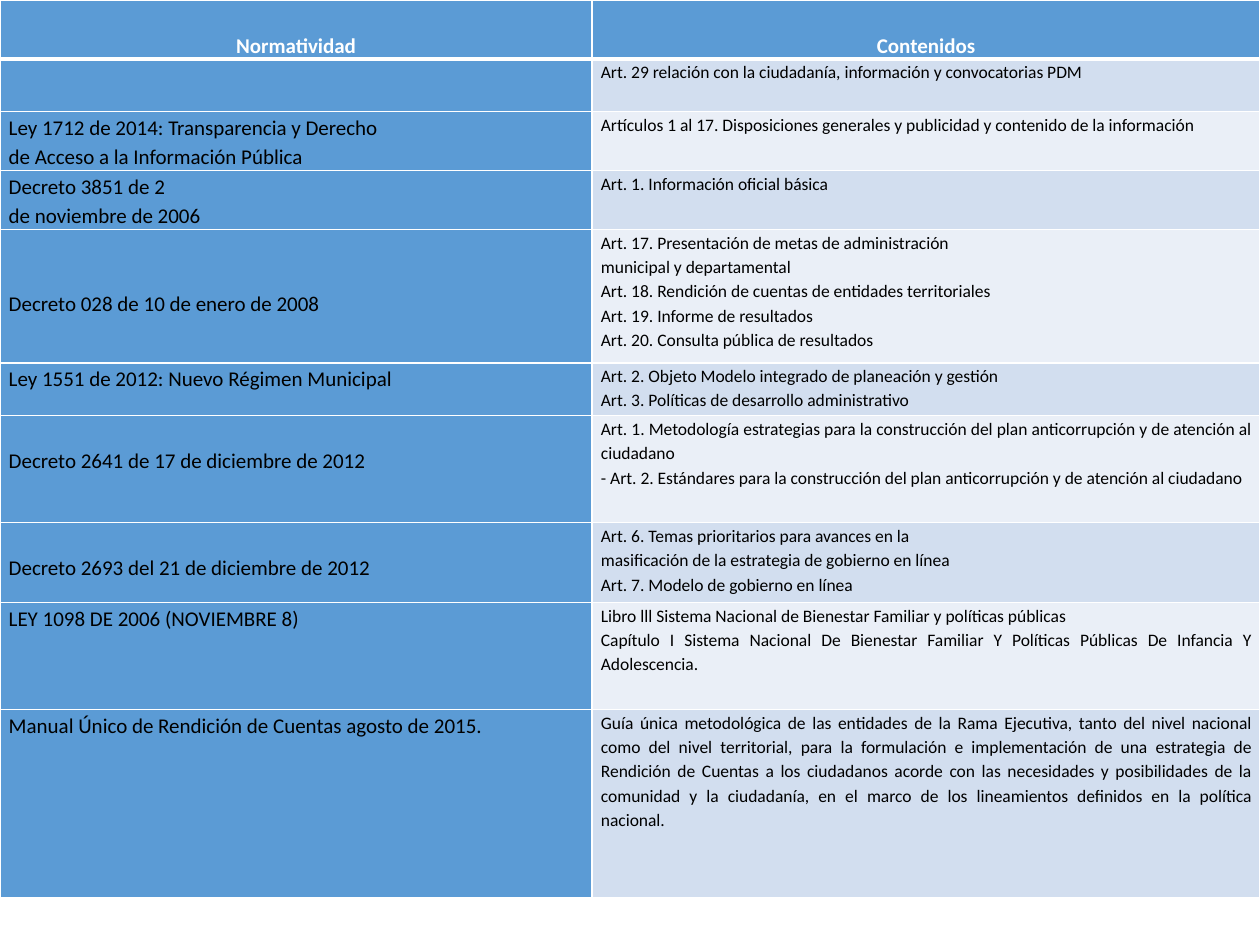
from lxml import etree
from pptx import Presentation
from pptx.dml.color import RGBColor
from pptx.enum import text as txt
from pptx.oxml.ns import qn
from pptx.util import Pt

COLORS = {
    "blue": "5B9BD5",
    "band_dark": "D2DEEF",
    "band_light": "EAEFF7",
    "white": "FFFFFF",
    "black": "000000",
}
FONT = "Calibri"
LINE_SPACING = 1.15
LAW_LINE = 16.8  # height of one 12 pt line at the spacing above
COLUMN_SHARES = (0.47, 0.53)
HEADER_HEIGHT = 33.7
HEADINGS = ("Normatividad", "Contenidos")

# row height, lines left free above the law, law, contents
LAWS = [
    (30, 0, [], ["Art. 29 relación con la ciudadanía, información y convocatorias PDM"]),
    (33.7, 0,
     ["Ley 1712 de 2014: Transparencia y Derecho", "de Acceso a la Información Pública"],
     ["Artículos 1 al 17. Disposiciones generales y publicidad y contenido de la información"]),
    (33.7, 0,
     ["Decreto 3851 de 2", "de noviembre de 2006"],
     ["Art. 1. Información oficial básica"]),
    (76.3, 2,
     ["Decreto 028 de 10 de enero de 2008"],
     ["Art. 17. Presentación de metas de administración",
      "municipal y departamental",
      "Art. 18. Rendición de cuentas de entidades territoriales",
      "Art. 19. Informe de resultados",
      "Art. 20. Consulta pública de resultados"]),
    (30.2, 0,
     ["Ley 1551 de 2012: Nuevo Régimen Municipal"],
     ["Art. 2. Objeto Modelo integrado de planeación y gestión",
      "Art. 3. Políticas de desarrollo administrativo"]),
    (61.2, 1,
     ["Decreto 2641 de 17 de diciembre de 2012"],
     ["Art. 1. Metodología estrategias para la construcción del plan anticorrupción "
      "y de atención al ciudadano",
      "- Art. 2. Estándares para la construcción del plan anticorrupción "
      "y de atención al ciudadano"]),
    (45.5, 1,
     ["Decreto 2693 del 21 de diciembre de 2012"],
     ["Art. 6. Temas prioritarios para avances en la",
      "masificación de la estrategia de gobierno en línea",
      "Art. 7. Modelo de gobierno en línea"]),
    (61.2, 0,
     ["LEY 1098 DE 2006 (NOVIEMBRE 8)"],
     ["Libro lll Sistema Nacional de Bienestar Familiar y políticas públicas",
      "Capítulo I Sistema Nacional De Bienestar Familiar Y Políticas Públicas "
      "De Infancia Y Adolescencia."]),
    (107.6, 0,
     ["Manual Único de Rendición de Cuentas agosto de 2015."],
     ["Guía única metodológica de las entidades de la Rama Ejecutiva, tanto del nivel "
      "nacional como del nivel territorial, para la formulación e implementación de una "
      "estrategia de Rendición de Cuentas a los ciudadanos acorde con las necesidades y "
      "posibilidades de la comunidad y la ciudadanía, en el marco de los lineamientos "
      "definidos en la política nacional."]),
]


def rgb(name):
    return RGBColor.from_string(COLORS[name])


def write_text(cell, lines, size=12, color="black", bold=False,
               align=txt.PP_ALIGN.JUSTIFY, free_lines=0):
    cell.margin_left = cell.margin_right = Pt(5)
    cell.margin_top = Pt(free_lines * LAW_LINE)
    cell.margin_bottom = Pt(0)
    cell.vertical_anchor = txt.MSO_ANCHOR.TOP
    frame = cell.text_frame
    frame.text = "\n".join(lines)
    for paragraph in frame.paragraphs:
        paragraph.alignment = align
        paragraph.line_spacing = LINE_SPACING
        for run in paragraph.runs:
            run.font.name = FONT
            run.font.size = Pt(size)
            run.font.bold = bold
            run.font.color.rgb = rgb(color)


def paint_cell(cell, fill, top=1, bottom=1):
    """Fill the cell and give it white borders; top and bottom are line widths."""
    properties = cell._tc.get_or_add_tcPr()
    for side, width in (("L", 1), ("R", 1), ("T", top), ("B", bottom)):
        line = etree.SubElement(properties, qn(f"a:ln{side}"), w=str(Pt(width)))
        solid = etree.SubElement(line, qn("a:solidFill"))
        etree.SubElement(solid, qn("a:srgbClr"), val=COLORS["white"])
    cell.fill.solid()
    cell.fill.fore_color.rgb = rgb(fill)


def add_law_table(slide, left, top, width):
    heights = [HEADER_HEIGHT] + [law[0] for law in LAWS]
    table = slide.shapes.add_table(
        len(heights), len(HEADINGS), Pt(left), Pt(top), Pt(width), Pt(sum(heights))).table
    for column, share in zip(table.columns, COLUMN_SHARES):
        column.width = Pt(width * share)
    for row, height in zip(table.rows, heights):
        row.height = Pt(height)

    for cell, heading in zip(table.rows[0].cells, HEADINGS):
        write_text(cell, [heading], color="white", bold=True,
                   align=txt.PP_ALIGN.CENTER, free_lines=1)
        paint_cell(cell, "blue", bottom=3)

    for index, (_, free_lines, law, contents) in enumerate(LAWS, start=1):
        law_cell, contents_cell = table.rows[index].cells
        top_line = 3 if index == 1 else 1
        write_text(law_cell, law, free_lines=free_lines)
        paint_cell(law_cell, "blue", top=top_line)
        write_text(contents_cell, contents, size=10)
        paint_cell(contents_cell, "band_dark" if index % 2 else "band_light", top=top_line)


def main():
    deck = Presentation()
    deck.slide_width, deck.slide_height = Pt(720), Pt(540)
    slide = deck.slides.add_slide(deck.slide_layouts[6])
    add_law_table(slide, left=0, top=0, width=720)
    deck.save("out.pptx")


if __name__ == "__main__":
    main()
